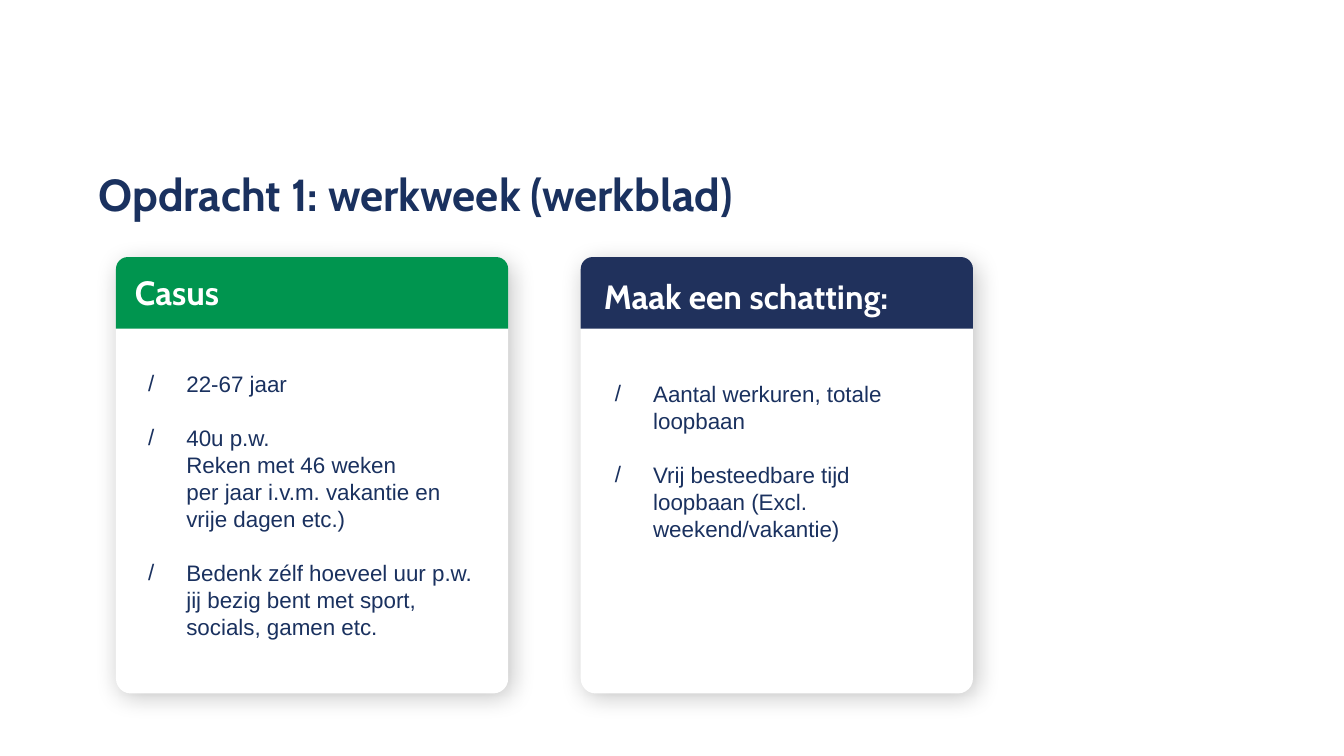
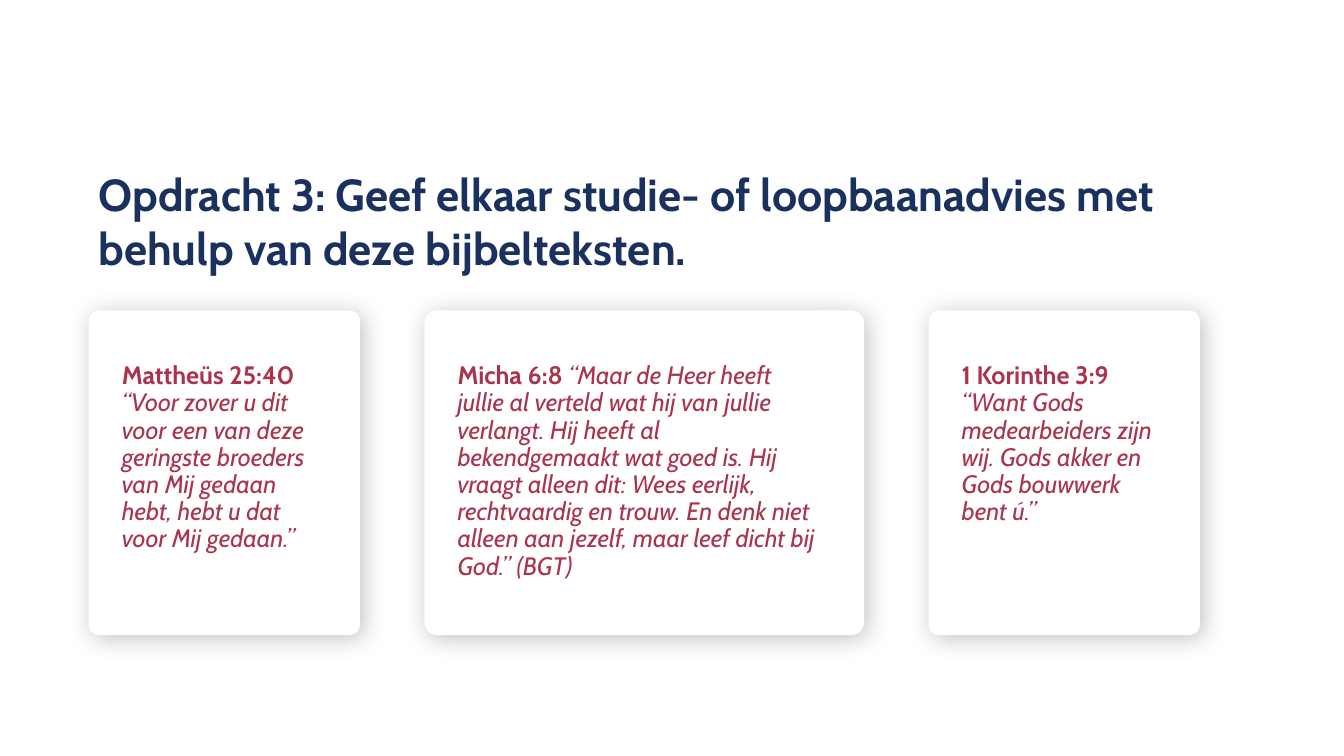
import pptx
import pptx.dml.color
import pptx.enum.shapes
import pptx.oxml
import pptx.oxml.ns
import pptx.util
from lxml import etree

Inches = pptx.util.Inches
Pt = pptx.util.Pt
qn = pptx.oxml.ns.qn
SHAPES = pptx.enum.shapes.MSO_SHAPE

COLORS = {
    "navy": "1A315F",
    "band": "20315C",
    "green": "00954F",
    "red": "AA334D",
    "white": "FFFFFF",
    "black": "000000",
}
TITLE = {"name": "Cabin", "size": Pt(32), "bold": True, "color": "navy"}
HEADING = {"name": "Cabin", "size": Pt(24), "bold": True, "color": "white"}
BULLET = {"name": "Arial", "size": Pt(16), "color": "navy"}
VERSE = {"name": "Cabin", "size": Pt(18), "bold": True, "color": "red"}
QUOTE = {**VERSE, "bold": False, "italic": True}

BULLET_LINE = Pt(19.3)
BULLET_INDENT = Inches(0.38)


def rgb(color):
    return pptx.dml.color.RGBColor.from_string(COLORS[color])


def add_span(para, text, style):
    span = para.add_run()
    span.text = text
    for name, value in style.items():
        if name == "color":
            span.font.color.rgb = rgb(value)
        else:
            setattr(span.font, name, value)


def add_text(page, left, top, width, height, paragraphs, **spacing):
    """Each paragraph is a list of (text, style) spans."""
    box = page.shapes.add_textbox(
        Inches(left), Inches(top), Inches(width), Inches(height))
    frame = box.text_frame
    frame.word_wrap = True
    for index, spans in enumerate(paragraphs):
        para = frame.add_paragraph() if index else frame.paragraphs[0]
        for name, value in spacing.items():
            setattr(para, name, value)
        for text, style in spans:
            for row, line in enumerate(text.split("\n")):
                if row:
                    para.add_line_break()
                add_span(para, line, style)
    return frame


def add_title(page, text):
    add_text(page, 0.88, 1.61, 11.48, 1.2, [[(text, TITLE)]])


def add_panel(page, kind, left, top, width, height, color):
    panel = page.shapes.add_shape(
        kind, Inches(left), Inches(top), Inches(width), Inches(height))
    panel.shadow.inherit = False
    panel.fill.solid()
    panel.fill.fore_color.rgb = rgb(color)
    panel.line.fill.background()
    return panel


def add_card(page, left, top, width, height):
    """White rounded card with a soft shadow."""
    card = add_panel(page, SHAPES.ROUNDED_RECTANGLE,
                     left, top, width, height, "white")
    card.adjustments[0] = 0.038
    effects = card._element.spPr.find(qn("a:effectLst"))
    shadow = etree.SubElement(
        effects, qn("a:outerShdw"), blurRad=str(Pt(17.4)), dist=str(Pt(3)),
        dir=str(45 * 60000), algn="tl", rotWithShape="0")
    tint = etree.SubElement(shadow, qn("a:srgbClr"), val=COLORS["black"])
    etree.SubElement(tint, qn("a:alpha"), val="24000")


def add_bullets(page, left, top, width, height, items):
    frame = add_text(page, left, top, width, height,
                     [[(item, BULLET)] for item in items],
                     line_spacing=BULLET_LINE)
    for index, para in enumerate(frame.paragraphs):
        if index:
            para.space_before = BULLET_LINE
        properties = para._p.get_or_add_pPr()
        properties.set("marL", str(BULLET_INDENT))
        properties.set("indent", str(-BULLET_INDENT))
        etree.SubElement(properties, qn("a:buFont"), typeface="Arial")
        etree.SubElement(properties, qn("a:buChar"), char="/")


def add_task_card(page, left, color, heading, heading_at, items, items_at):
    """Card with a coloured heading band; the text places are offsets."""
    width, band_top = 3.89, 2.55
    add_card(page, left, 2.58, width, 4.3)
    add_panel(page, SHAPES.ROUND_2_SAME_RECTANGLE,
              left, band_top, width, 0.71, color)
    add_text(page, left + heading_at[0], band_top + heading_at[1], 3.5, 0.55,
             [[(heading, HEADING)]], space_after=Pt(6))
    add_bullets(page, left + items_at[0], band_top + items_at[1],
                3.44, 2.79, items)


def build_workweek(page):
    add_title(page, "Opdracht 1: werkweek (werkblad)")
    add_task_card(page, 1.15, "green", "Casus", (0.09, 0.1), [
        "22-67 jaar",
        "40u p.w.\nReken met 46 weken\n"
        "per jaar i.v.m. vakantie en\nvrije dagen etc.)",
        "Bedenk zélf hoeveel uur p.w.\n"
        "jij bezig bent met sport,\nsocials, gamen etc.",
    ], (0.22, 1.07))
    add_task_card(page, 5.76, "band", "Maak een schatting:", (0.13, 0.14), [
        "Aantal werkuren, totale loopbaan",
        "Vrij besteedbare tijd loopbaan (Excl. weekend/vakantie)",
    ], (0.24, 1.17))


def build_verses(page):
    add_title(page, "Opdracht 3: Geef elkaar studie- of loopbaanadvies met "
                    "behulp van deze bijbelteksten.")
    verses = [
        (2.69, 2.24, [
            [("Mattheüs 25:40", VERSE)],
            [("“Voor zover u dit voor een van deze geringste broeders van "
              "Mij gedaan hebt, hebt u dat voor Mij gedaan.”", QUOTE)],
        ]),
        (4.36, 3.8, [
            [("Micha 6:8 ", VERSE),
             ("“Maar de Heer heeft jullie al verteld wat hij van jullie "
              "verlangt. Hij heeft al bekendgemaakt wat goed is. Hij vraagt "
              "alleen dit: Wees eerlijk, rechtvaardig en trouw. En denk niet "
              "alleen aan jezelf, maar leef dicht bij God.” (BGT)", QUOTE)],
        ]),
        (2.69, 2.24, [
            [("1 Korinthe 3:9", VERSE)],
            [("“Want Gods medearbeiders zijn wij. Gods akker en Gods "
              "bouwwerk", QUOTE)],
            [("bent ú.”", QUOTE)],
        ]),
    ]
    left, gap = 0.88, 0.64
    for card_width, text_width, paragraphs in verses:
        add_card(page, left, 3.08, card_width, 3.22)
        add_text(page, left + 0.23, 3.55, text_width, 2.29, paragraphs,
                 line_spacing=0.9)
        left += card_width + gap


def main():
    deck = pptx.Presentation()
    deck.slide_width = Inches(13.33)
    deck.slide_height = Inches(7.5)
    for build in (build_workweek, build_verses):
        build(deck.slides.add_slide(deck.slide_layouts[6]))
    deck.save("out.pptx")


if __name__ == "__main__":
    main()
